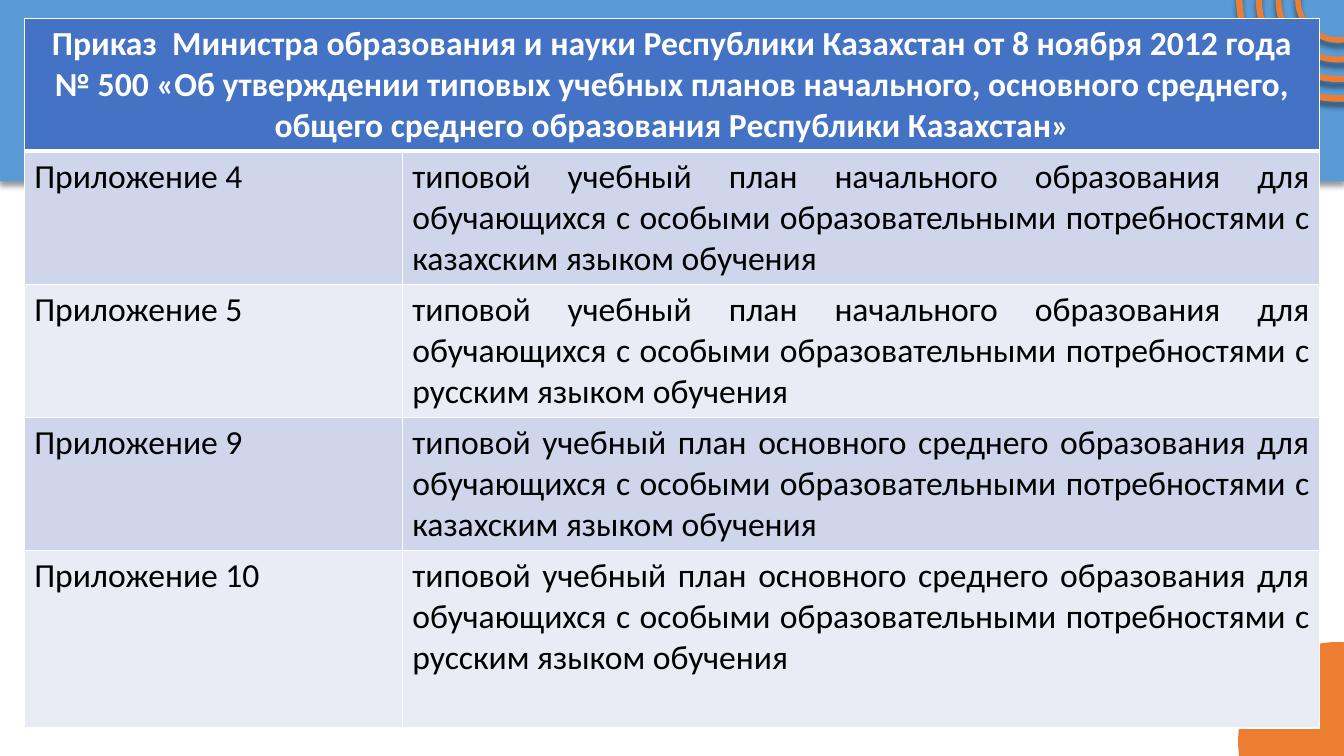
from lxml.etree import SubElement
from pptx import Presentation
from pptx.dml.color import RGBColor
from pptx.enum.shapes import MSO_SHAPE as Shape
from pptx.enum.text import PP_ALIGN as Align
from pptx.oxml import parse_xml
from pptx.oxml.ns import nsdecls, qn
from pptx.util import Inches, Pt

HEADING = (
    "Приказ  Министра образования и науки Республики Казахстан от 8 ноября 2012 года "
    "№ 500 «Об утверждении типовых учебных планов начального, основного среднего, "
    "общего среднего образования Республики Казахстан»"
)
PLANS = [
    ("Приложение 4", "начального", "казахским"),
    ("Приложение 5", "начального", "русским"),
    ("Приложение 9", "основного среднего", "казахским"),
    ("Приложение 10", "основного среднего", "русским"),
]
COLUMN_WIDTHS = [3.75, 9.1]
ROW_HEIGHTS = [1.32, 1.32, 1.32, 1.32, 1.76]


def colour(value):
    return RGBColor.from_string(value)


class PlanSlide:
    """Draws styled elements on the current slide."""

    font = "Calibri"
    size = 24
    blue, orange, white, black = "5B9BD5", "ED7D31", "FFFFFF", "000000"
    heading_fill = "4472C4"
    bands = ["CFD5EA", "E9EBF5"]

    def __init__(self, page):
        self.page = page

    def shape(self, kind, left, top, width, height, fill, line_width=0):
        shape = self.page.shapes.add_shape(
            kind, Inches(left), Inches(top), Inches(width), Inches(height))
        shape.shadow.inherit = False
        shape.fill.solid()
        shape.fill.fore_color.rgb = colour(fill)
        if line_width:
            shape.line.color.rgb = colour(fill)
            shape.line.width = Pt(line_width)
        else:
            shape.line.fill.background()
        return shape

    def shadow(self, shape, opacity, blur, distance):
        effects = shape._element.spPr.find(qn("a:effectLst"))
        outer = SubElement(effects, qn("a:outerShdw"), blurRad=str(Pt(blur)),
                           dist=str(Pt(distance)), dir="5400000", rotWithShape="0")
        tint = SubElement(outer, qn("a:srgbClr"), val=self.black)
        SubElement(tint, qn("a:alpha"), val=str(opacity * 1000))

    def ring(self, centre_x, centre_y, diameter):
        ring = self.shape(Shape.DONUT, centre_x - diameter / 2, centre_y - diameter / 2,
                          diameter, diameter, self.orange, 3.5)
        ring.adjustments[0] = 0.008
        self.shadow(ring, 43, 4, 4)

    def borders(self, cell, top, bottom):
        properties = cell._tc.get_or_add_tcPr()
        widths = {"lnL": 1, "lnR": 1, "lnT": top, "lnB": bottom}
        for place, (side, width) in enumerate(widths.items()):
            properties.insert(place, parse_xml(
                f'<a:{side} {nsdecls("a")} w="{Pt(width)}"><a:solidFill>'
                f'<a:srgbClr val="{self.white}"/></a:solidFill></a:{side}>'))

    def cell(self, cell, text, fill, ink, align, bold=False, top=1, bottom=1):
        cell.fill.solid()
        cell.fill.fore_color.rgb = colour(fill)
        self.borders(cell, top, bottom)
        para = cell.text_frame.paragraphs[0]
        para.alignment = align
        span = para.add_run()
        span.text = text
        span.font.name = self.font
        span.font.size = Pt(self.size)
        span.font.bold = bold
        span.font.color.rgb = colour(ink)

    def table(self, left, top, widths, heights, heading, rows):
        table = self.page.shapes.add_table(
            len(heights), len(widths), Inches(left), Inches(top),
            Inches(sum(widths)), Inches(sum(heights))).table
        for column, width in zip(table.columns, widths):
            column.width = Inches(width)
        for row, height in zip(table.rows, heights):
            row.height = Inches(height)
        table.cell(0, 0).merge(table.cell(0, len(widths) - 1))
        self.cell(table.cell(0, 0), heading, self.heading_fill, self.white,
                  Align.CENTER, bold=True, bottom=3)
        self.borders(table.cell(0, 1), 1, 3)
        for number, texts in enumerate(rows, 1):
            for position, text in enumerate(texts):
                self.cell(table.cell(number, position), text, self.bands[(number - 1) % 2],
                          self.black, Align.JUSTIFY, top=3 if number == 1 else 1)


def main():
    deck = Presentation()
    deck.slide_width, deck.slide_height = Inches(13.33), Inches(7.5)
    slide = PlanSlide(deck.slides.add_slide(deck.slide_layouts[6]))
    banner = slide.shape(Shape.RECTANGLE, 0, 0, 13.33, 1.8, slide.blue)
    slide.shadow(banner, 40, 4, 3)
    slide.shape(Shape.OVAL, 12.28, 6.37, 1.97, 1.97, slide.orange)
    for step in range(4):
        slide.ring(13.27, 0, 1.97 - 0.39 * step)
    rows = [
        (name, f"типовой учебный план {level} образования для обучающихся с особыми "
               f"образовательными потребностями с {language} языком обучения")
        for name, level, language in PLANS
    ]
    slide.table(0.24, 0.18, COLUMN_WIDTHS, ROW_HEIGHTS, HEADING, rows)
    deck.save("out.pptx")


if __name__ == "__main__":
    main()
